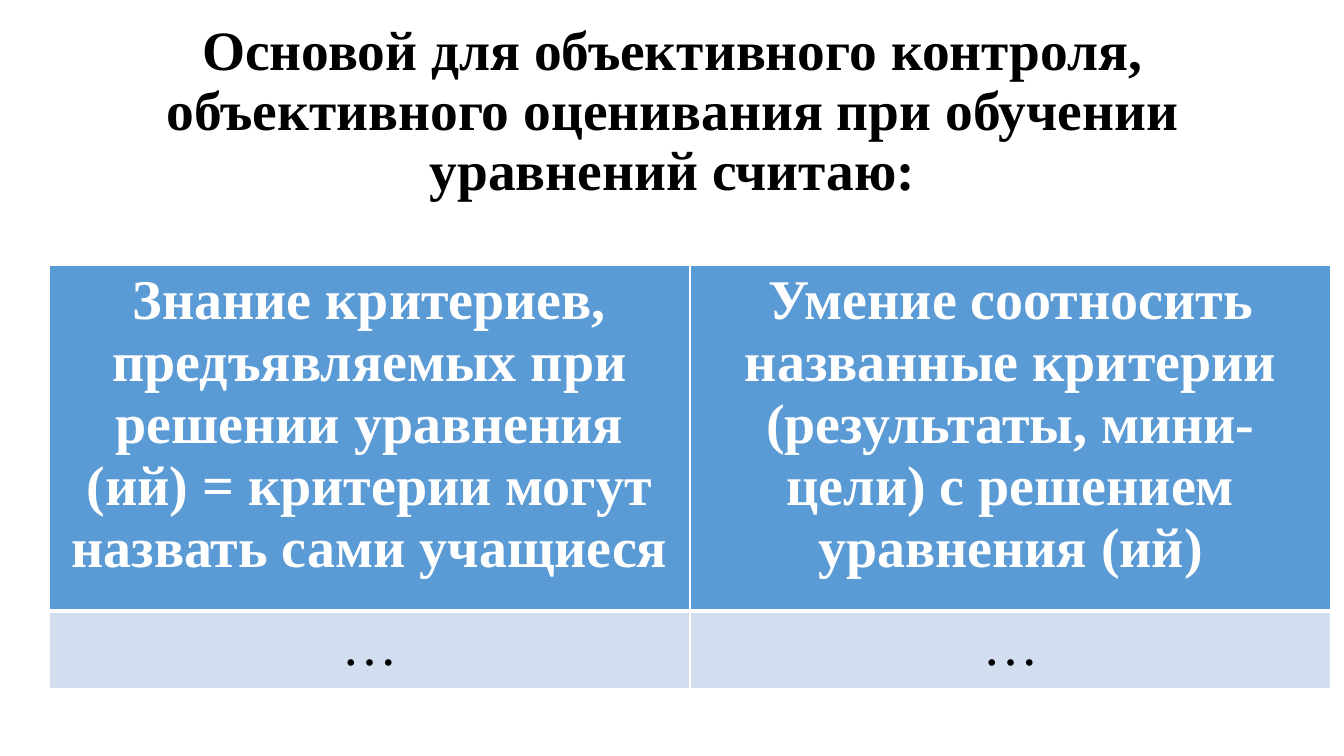
from lxml.etree import SubElement as Sub
from pptx import Presentation
from pptx.dml.color import RGBColor as Rgb
from pptx.enum.text import MSO_ANCHOR as Anchor, PP_ALIGN as Align
from pptx.oxml.ns import qn
from pptx.util import Pt

SCALE = 914400 / 100.8


def px(num):
    return round(num * SCALE)


def tint(code):
    return Rgb.from_string(code)


class Deck:
    font = "Times New Roman"
    black, white = "000000", "FFFFFF"
    head, body = "5B9BD5", "D2DEEF"

    def __init__(self, wide, high):
        self.show = Presentation()
        self.show.slide_width, self.show.slide_height = px(wide), px(high)
        self.slide = self.show.slides.add_slide(self.show.slide_layouts[6])

    def label(self, frame, text, size, color, bold):
        para = frame.paragraphs[0]
        para.text = text
        para.alignment = Align.CENTER
        font = para.font
        font.name, font.size, font.bold = self.font, Pt(size), bold
        font.color.rgb = tint(color)
        return para

    def title(self, text, left, top, wide, high, foot):
        box = self.slide.shapes.add_textbox(px(left), px(top), px(wide), px(high))
        frame = box.text_frame
        frame.word_wrap = True
        frame.vertical_anchor = Anchor.MIDDLE
        frame.margin_bottom = px(foot)
        self.label(frame, text, 39.6, self.black, True).line_spacing = 0.9

    def border(self, cell, side, width):
        line = Sub(cell._tc.get_or_add_tcPr(), qn("a:ln" + side), w=str(Pt(width)))
        fill = Sub(line, qn("a:solidFill"))
        Sub(fill, qn("a:srgbClr"), val=self.white)

    def table(self, rows, left, top, wide, highs):
        cols = len(rows[0])
        grid = self.slide.shapes.add_table(
            len(rows), cols, px(left), px(top), px(wide * cols), px(sum(highs))
        ).table
        for col in grid.columns:
            col.width = px(wide)
        for r, (row, high) in enumerate(zip(rows, highs)):
            grid.rows[r].height = px(high)
            first = r == 0
            for c, text in enumerate(row):
                cell = grid.cell(r, c)
                for side in "LRTB":
                    thick = side == ("B" if first else "T")
                    self.border(cell, side, 3 if thick else 1)
                cell.fill.solid()
                cell.fill.fore_color.rgb = tint(self.head if first else self.body)
                color = self.white if first else self.black
                self.label(cell.text_frame, text, 40, color, first)


def main():
    deck = Deck(1344, 756)
    deck.title(
        "Основой для объективного контроля, объективного оценивания "
        "при обучении уравнений считаю:",
        93, 40, 1159, 205, 65,
    )
    rows = [
        [
            "Знание критериев, предъявляемых при решении уравнения (ий) "
            "= критерии могут назвать сами учащиеся",
            "Умение соотносить названные критерии (результаты, мини-цели) "
            "с решением уравнения (ий)",
        ],
        ["…", "…"],
    ]
    deck.table(rows, 49, 265, 641, [319, 72])
    deck.show.save("out.pptx")


if __name__ == "__main__":
    main()
